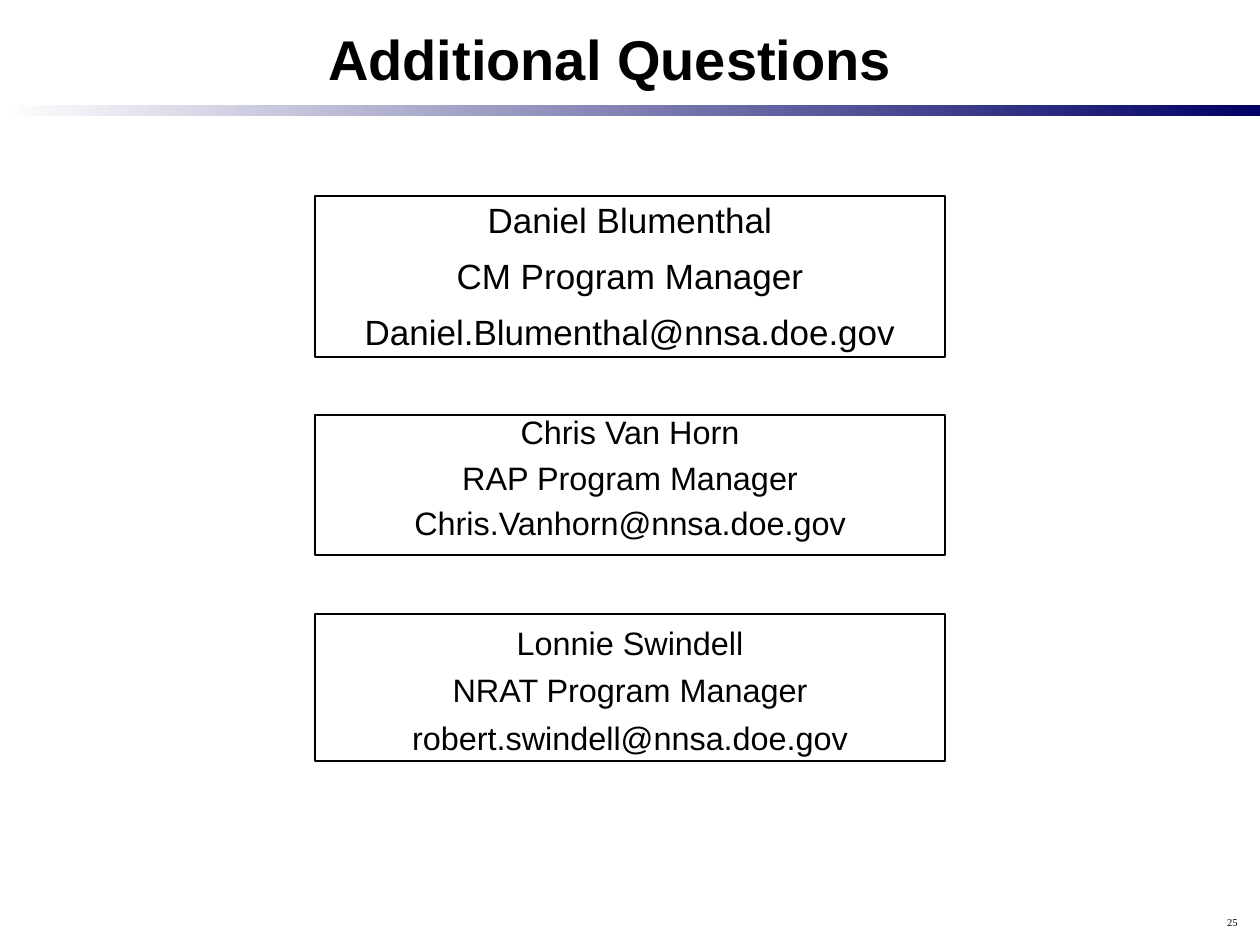
"""Build the "Additional Questions" contact slide."""
from dataclasses import dataclass

from pptx import Presentation
from pptx.dml.color import RGBColor
from pptx.enum.shapes import MSO_SHAPE as Shape
from pptx.enum.text import MSO_ANCHOR as Anchor, PP_ALIGN as Align
from pptx.util import Emu, Pt

PX = 914400 / 126


@dataclass(frozen=True)
class Theme:
    ink: RGBColor = RGBColor(0, 0, 0)
    white: RGBColor = RGBColor(255, 255, 255)
    navy: RGBColor = RGBColor(0, 0, 0x66)
    sans: str = "Arial"
    serif: str = "Times New Roman"
    title: float = 32
    large: float = 20
    medium: float = 18.5
    number: float = 6
    outline: float = 0.75


THEME = Theme()

# top, height, text inset, type size, line spacing, space before, lines
CONTACTS = [
    (196, 161, 7, THEME.large, 0.9, 10.5,
     ["Daniel Blumenthal", "CM Program Manager", "Daniel.Blumenthal@nnsa.doe.gov"]),
    (415, 140, 8, THEME.medium, 0.7, 10.5,
     ["Chris Van Horn", "RAP Program Manager", "Chris.Vanhorn@nnsa.doe.gov"]),
    (614, 147, 9, THEME.medium, 1.0, 5,
     ["Lonnie Swindell", "NRAT Program Manager", "robert.swindell@nnsa.doe.gov"]),
]


def px(length):
    return Emu(round(length * PX))


def add_rect(page, *frame):
    shape = page.shapes.add_shape(Shape.RECTANGLE, *map(px, frame))
    shape.shadow.inherit = False
    return shape


def write_line(para, text, size, align, font=THEME.sans, bold=False):
    para.alignment = align
    span = para.add_run()
    span.text = text
    span.font.size = Pt(size)
    span.font.name = font
    span.font.bold = bold
    span.font.color.rgb = THEME.ink


def add_label(page, frame, text, size, align, anchor=Anchor.TOP, **style):
    box = page.shapes.add_textbox(*map(px, frame)).text_frame
    box.word_wrap = True
    box.vertical_anchor = anchor
    write_line(box.paragraphs[0], text, size, align, **style)


def add_gradient_bar(page):
    bar = add_rect(page, 0, 105, 1260, 11)
    bar.line.fill.background()
    bar.fill.gradient()
    bar.fill.gradient_angle = 0
    for stop, position, color in zip(
            bar.fill.gradient_stops, (0, 1), (THEME.white, THEME.navy)):
        stop.position = position
        stop.color.rgb = color


def add_contact(page, top, height, inset, size, spacing, before, lines):
    shape = add_rect(page, 315, top, 630, height)
    shape.fill.background()
    shape.line.color.rgb = THEME.ink
    shape.line.width = Pt(THEME.outline)
    box = shape.text_frame
    box.word_wrap = True
    box.vertical_anchor = Anchor.TOP
    box.margin_top = px(inset)
    box.margin_bottom = px(5)
    for index, text in enumerate(lines):
        para = box.add_paragraph() if index else box.paragraphs[0]
        para.line_spacing = spacing
        para.space_before = Pt(before if index else 0)
        write_line(para, text, size, Align.CENTER)


def main():
    deck = Presentation()
    deck.slide_width, deck.slide_height = px(1260), px(945)
    page = deck.slides.add_slide(deck.slide_layouts[6])
    add_gradient_bar(page)
    add_label(page, (1187, 910, 63, 25), "25", THEME.number, Align.RIGHT,
              font=THEME.serif)
    add_label(page, (116, 18, 988, 81), "Additional Questions", THEME.title,
              Align.CENTER, Anchor.MIDDLE, bold=True)
    for contact in CONTACTS:
        add_contact(page, *contact)
    deck.save("out.pptx")


if __name__ == "__main__":
    main()
